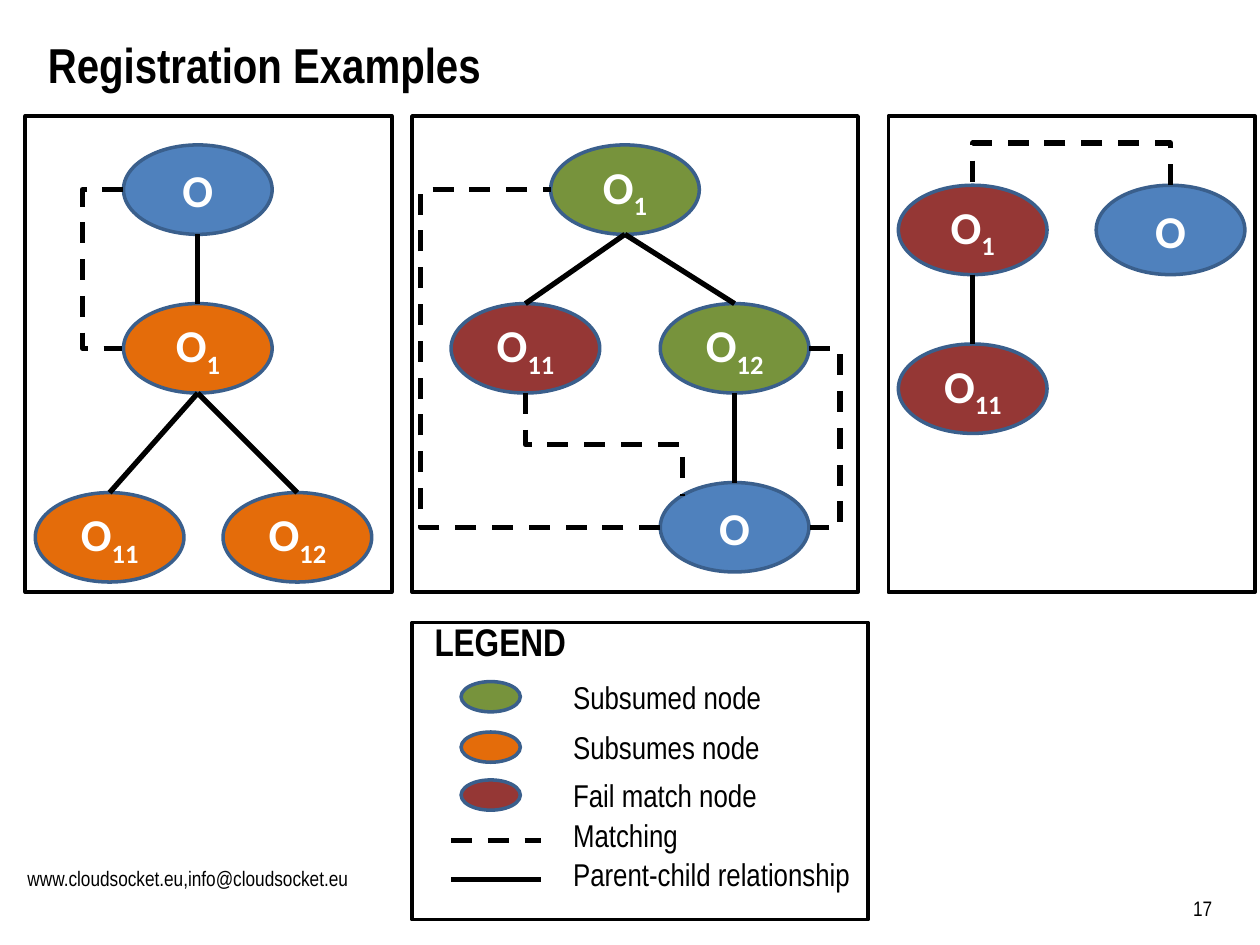
from lxml import etree
from pptx import Presentation
from pptx.dml.color import RGBColor
from pptx.enum.dml import MSO_LINE
from pptx.enum.shapes import MSO_CONNECTOR, MSO_SHAPE
from pptx.enum.text import MSO_ANCHOR, PP_ALIGN
from pptx.oxml.ns import qn
from pptx.util import Inches, Pt

STRAIGHT, ELBOW = MSO_CONNECTOR.STRAIGHT, MSO_CONNECTOR.ELBOW
OVAL, RECTANGLE = MSO_SHAPE.OVAL, MSO_SHAPE.RECTANGLE
TOP, MIDDLE, BOTTOM = MSO_ANCHOR.TOP, MSO_ANCHOR.MIDDLE, MSO_ANCHOR.BOTTOM
LEFT, CENTER, RIGHT = PP_ALIGN.LEFT, PP_ALIGN.CENTER, PP_ALIGN.RIGHT
DASH = MSO_LINE.DASH

# The slide is a grid of 100 columns by 75 rows
COLUMNS, ROWS = 100, 75
CELL = Inches(10) / COLUMNS
NODE_WIDTH, NODE_HEIGHT = 11.8, 7.1
COLORS = {
    "black": "000000", "white": "FFFFFF", "outline": "3A5F8C",
    "new": "4F81BD", "subsumes": "E46C0A",
    "subsumed": "77933C", "fail": "953735",
}
# Points on a node, as shares of its width and height
SITES = {
    "top": (0.5, 0), "bottom": (0.5, 1), "left": (0, 0.5),
    "right": (1, 0.5), "top left": (0.15, 0.15),
}

# Nodes: name -> (column, row, colour); matches end with the position of the rail
EXAMPLES = [
    {
        "box": (2, 9.2, 29.1, 37.8),
        "nodes": {"O": (7.8, 2.3, "new"), "O1": (7.8, 14.9, "subsumes"),
                  "O11": (0.8, 29.9, "subsumes"), "O12": (15.7, 29.9, "subsumes")},
        "children": [("O", "O1"), ("O1", "O11"), ("O1", "O12")],
        "matches": [("O", "left", "O1", "left", 4.5)],
    },
    {
        "box": (32.7, 9.2, 35.4, 37.8),
        "nodes": {"O1": (11, 2.3, "subsumed"), "O11": (3.1, 14.9, "fail"),
                  "O12": (19.7, 14.9, "subsumed"), "O": (19.7, 29.1, "new")},
        "children": [("O1", "O11"), ("O1", "O12"), ("O12", "O")],
        "matches": [("O", "left", "O1", "left", 0.7),
                    ("O11", "bottom", "O", "top left", 26.1),
                    ("O12", "right", "O", "right", 34)],
    },
    {
        "box": (70.5, 9.2, 29.1, 37.8),
        "nodes": {"O1": (0.8, 5.5, "fail"), "O11": (0.8, 18.1, "fail"),
                  "O": (16.5, 5.5, "new")},
        "children": [("O1", "O11")],
        "matches": [("O", "top", "O1", "top", 2.1)],
    },
]
LEGEND_BOX = (32.7, 49.4, 36.2, 23.6)
# Label, row, node colour (None for a line), dash
LEGEND_ENTRIES = [
    ("Subsumed node", 3.9, "subsumed", None),
    ("Subsumes node", 7.9, "subsumes", None),
    ("Fail match node", 11.7, "fail", None),
    ("Matching", 14.9, None, DASH),
    ("Parent-child relationship", 18, None, None),
]


def grid(*cells):
    return [round(cell * CELL) for cell in cells]


def color(name):
    return RGBColor.from_string(COLORS[name])


def write(shape, text, subscript="", font="Arial Narrow", size=18, bold=False,
          fill="black", align=LEFT, anchor=TOP):
    frame = shape.text_frame
    frame.word_wrap = True
    frame.vertical_anchor = anchor
    paragraph = frame.paragraphs[0]
    paragraph.alignment = align
    for part in filter(None, (text, subscript)):
        run = paragraph.add_run()
        run.text = part
        run.font.name, run.font.size, run.font.bold = font, Pt(size), bold
        run.font.color.rgb = color(fill)
    if subscript:
        run._r.get_or_add_rPr().set("baseline", "-25000")


def add_label(slide, box, text, **text_format):
    write(slide.shapes.add_textbox(*grid(*box)), text, **text_format)


def add_outlined(slide, kind, box, fill=None, outline="black"):
    shape = slide.shapes.add_shape(kind, *grid(*box))
    shape.shadow.inherit = False
    if fill:
        shape.fill.solid()
        shape.fill.fore_color.rgb = color(fill)
    else:
        shape.fill.background()
    shape.line.color.rgb = color(outline)
    shape.line.width = Pt(2)
    return shape


def add_line(slide, start, end, kind=STRAIGHT, dash=None):
    connector = slide.shapes.add_connector(kind, *grid(*start, *end))
    connector.line.color.rgb = color("black")
    connector.line.width = Pt(3)
    if dash:
        connector.line.dash_style = dash
    etree.SubElement(connector._element.spPr, qn("a:effectLst"))
    return connector


def add_elbow(slide, start, end, rail, vertical):
    """Dashed line in three legs; the middle leg runs along the rail."""
    axis = 1 if vertical else 0
    end = list(end)
    if abs(end[axis] - start[axis]) < 0.1:  # an elbow needs some extent
        end[axis] = start[axis] + (0.1 if rail > start[axis] else -0.1)
    bend = (rail - start[axis]) / (end[axis] - start[axis])
    if vertical:  # lay the line out sideways, then turn it by 270 degrees
        center_x, center_y = [(a + b) / 2 for a, b in zip(start, end)]
        half_x, half_y = (start[1] - end[1]) / 2, (end[0] - start[0]) / 2
        start = (center_x - half_x, center_y - half_y)
        end = (center_x + half_x, center_y + half_y)
    connector = add_line(slide, start, end, ELBOW, DASH)
    properties = connector._element.spPr
    if vertical:
        properties.find(qn("a:xfrm")).set("rot", str(270 * 60000))
    adjustments = properties.find(qn("a:prstGeom")).find(qn("a:avLst"))
    etree.SubElement(adjustments, qn("a:gd"), name="adj1",
                     fmla=f"val {round(bend * 100000)}")


def add_example(slide, box, nodes, children, matches):
    left, top = box[:2]
    add_outlined(slide, RECTANGLE, box)

    def site(name, side):
        across, down = SITES[side]
        column, row, _ = nodes[name]
        return (left + column + across * NODE_WIDTH, top + row + down * NODE_HEIGHT)

    # Nodes
    ovals = {}
    for name, (column, row, fill) in nodes.items():
        node_box = (left + column, top + row, NODE_WIDTH, NODE_HEIGHT)
        ovals[name] = add_outlined(slide, OVAL, node_box, fill, "outline")
        write(ovals[name], name[0], name[1:], font="Calibri", size=26, bold=True,
              fill="white", align=CENTER, anchor=MIDDLE)
    # Parent-child lines
    for parent, child in children:
        line = add_line(slide, site(parent, "bottom"), site(child, "top"))
        line.end_connect(ovals[child], 0)
    # Matching lines
    for first, first_side, second, second_side, rail in matches:
        vertical = first_side in ("top", "bottom")
        add_elbow(slide, site(first, first_side), site(second, second_side),
                  rail + (top if vertical else left), vertical)


def add_legend(slide, box):
    left, top = box[:2]
    add_outlined(slide, RECTANGLE, box)
    add_label(slide, (left + 0.8, top - 0.8, 33.9, 4.7), "LEGEND", size=22, bold=True)
    for text, row, fill, dash in LEGEND_ENTRIES:
        y = top + row
        if fill:
            add_outlined(slide, OVAL, (left + 3.9, y + 0.8, 4.7, 2.4), fill, "outline")
        else:
            add_line(slide, (left + 3.1, y + 2.4), (left + 10.2, y + 2.4), dash=dash)
        add_label(slide, (left + 11.8, y, 24.4, 4), text)


def add_title(slide, box, text):
    title = slide.shapes.title
    title.left, title.top, title.width, title.height = grid(*box)
    write(title, text, size=28, bold=True)


def add_footer(slide):
    add_label(slide, (1.2, 68.2, 28.4, 5), "www.cloudsocket.eu,info@cloudsocket.eu", size=12)
    add_label(slide, (68.9, 68, 28.3, 5.6), "17", size=12, align=RIGHT, anchor=BOTTOM)


def main():
    presentation = Presentation()
    presentation.slide_width, presentation.slide_height = grid(COLUMNS, ROWS)
    slide = presentation.slides.add_slide(presentation.slide_layouts[5])
    add_title(slide, (2.8, 2.2, 94.5, 10.1), "Registration Examples")
    for example in EXAMPLES:
        add_example(slide, **example)
    add_legend(slide, LEGEND_BOX)
    add_footer(slide)
    presentation.save("out.pptx")


if __name__ == "__main__":
    main()
